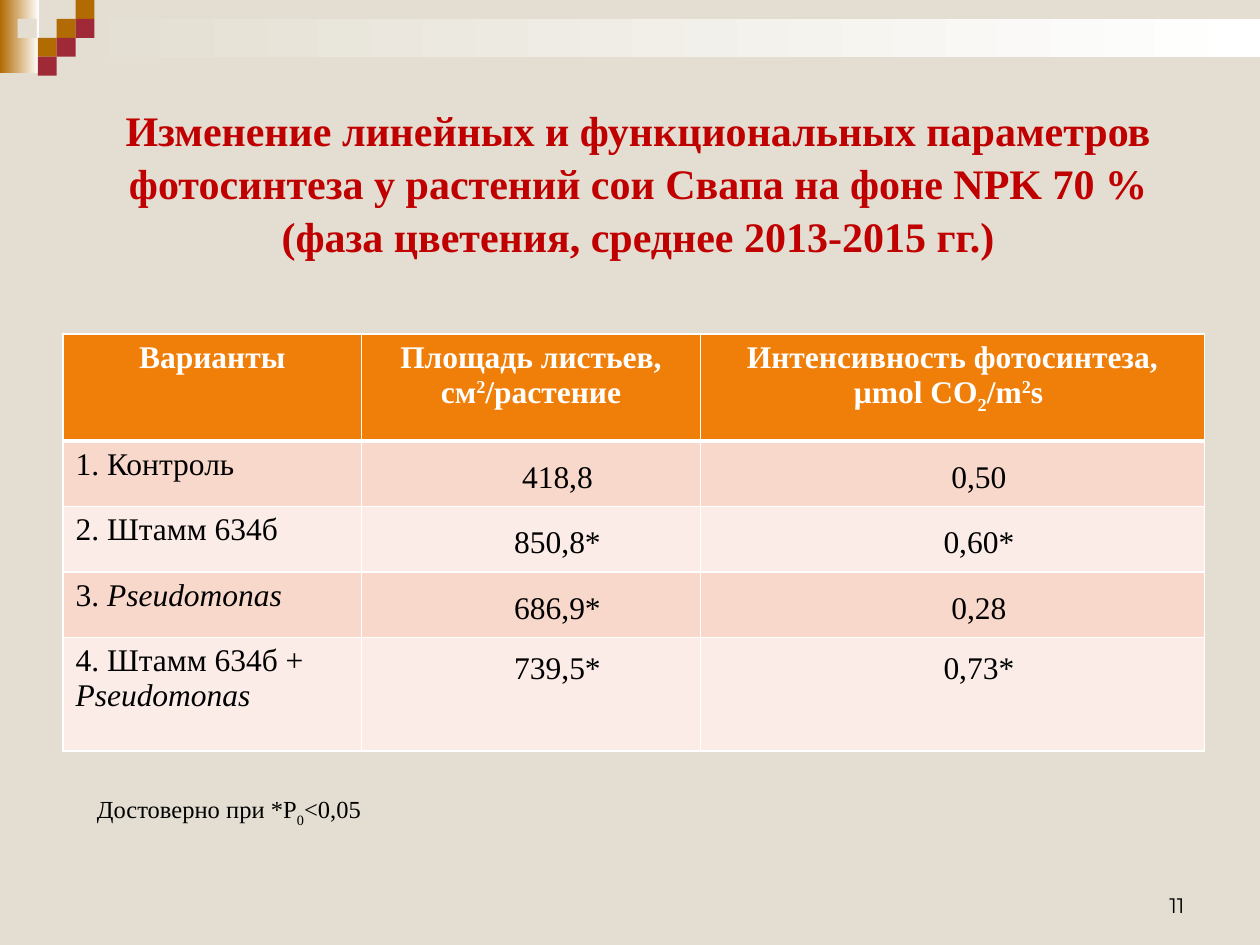
from pptx import Presentation
from pptx.dml.color import RGBColor
from pptx.enum.shapes import MSO_SHAPE
from pptx.enum.text import MSO_ANCHOR as Anchor, MSO_AUTO_SIZE as AutoSize, PP_ALIGN as Align
from pptx.oxml import parse_xml
from pptx.oxml.ns import nsdecls
from pptx.util import Inches, Pt

COLORS = {
    "background": "E3DED1", "ochre": "B26B02", "maroon": "9F2936",
    "white": "FFFFFF", "black": "000000", "title": "C00000",
    "header": "F07F09", "odd_row": "F9D8CC", "even_row": "FCECE7",
}


def rgb(name):
    return RGBColor.from_string(COLORS[name])


def write_text(paragraph, text, size=18, color="black", font="Times New Roman",
               bold=False, italic=False, baseline=0, align=Align.LEFT):
    paragraph.alignment = align
    run = paragraph.add_run()
    run.text = text
    run.font.name = font
    run.font.size = Pt(size)
    run.font.bold = bold
    run.font.italic = italic
    run.font.color.rgb = rgb(color)
    if baseline:
        run.font._element.set("baseline", str(baseline * 1000))


presentation = Presentation()
presentation.slide_width = Inches(10)
presentation.slide_height = Inches(7.5)
slide = presentation.slides.add_slide(presentation.slide_layouts[5])
slide.background.fill.solid()
slide.background.fill.fore_color.rgb = rgb("background")

decorations = [
    (0, 0, 0.31, 0.58, ("ochre", "white")),
    (0.45, 0.15, 9.55, 0.3, ("background", "white")),
]
squares = [
    (0.45, 0.15, "ochre"), (0.6, 0, "ochre"), (0.6, 0.15, "maroon"),
    (0.3, 0.3, "ochre"), (0.14, 0.15, "background"),
    (0.45, 0.3, "maroon"), (0.3, 0.45, "maroon"),
]
decorations += [(left, top, 0.15, 0.15, (color,)) for left, top, color in squares]
for left, top, width, height, colors in decorations:
    shape = slide.shapes.add_shape(MSO_SHAPE.RECTANGLE, Inches(left), Inches(top),
                                   Inches(width), Inches(height))
    shape.shadow.inherit = False
    shape.line.fill.background()
    if len(colors) == 2:
        shape.fill.gradient()
        shape.fill.gradient_angle = 0
        for stop, color in zip(shape.fill.gradient_stops, colors):
            stop.color.rgb = rgb(color)
    else:
        shape.fill.solid()
        shape.fill.fore_color.rgb = rgb(colors[0])

title = slide.shapes.title
title.left, title.top = Inches(0.51), Inches(0.76)
title.width, title.height = Inches(9.11), Inches(1.18)
title.text_frame.word_wrap = True
title.text_frame.auto_size = AutoSize.NONE
title.text_frame.vertical_anchor = Anchor.TOP
title.text_frame.paragraphs[0].line_spacing = 1.05
write_text(title.text_frame.paragraphs[0],
           "Изменение линейных и функциональных параметров фотосинтеза у растений сои "
           "Свапа на фоне NPK 70 % (фаза цветения, среднее 2013-2015 гг.)",
           size=24, color="title", bold=True, align=Align.CENTER)

superscript, subscript, italic = {"baseline": 30}, {"baseline": -25}, {"italic": True}
rows = [
    [
        [[("Варианты", {})]],
        [[("Площадь листьев, см", {}), ("2", superscript), ("/растение", {})]],
        [[("Интенсивность фотосинтеза,", {})],
         [("μmol CO", {}), ("2", subscript), ("/m", {}), ("2", superscript), ("s ", {})]],
    ],
    [[[("1. Контроль", {})]], [[("418,8", {})]], [[("0,50", {})]]],
    [[[("2. Штамм 634б", {})]], [[("850,8*", {})]], [[("0,60*", {})]]],
    [[[("3. ", {}), ("Pseudomonas", italic)]], [[("686,9*", {})]], [[("0,28", {})]]],
    [[[("4. Штамм 634б +", {})], [("Pseudomonas", italic)]],
     [[("739,5*", {})]], [[("0,73*", {})]]],
]
column_widths = [2.37, 2.69, 4]
row_heights = [0.85, 0.52, 0.52, 0.52, 0.9]
table = slide.shapes.add_table(len(rows), len(column_widths), Inches(0.5), Inches(2.65),
                               Inches(9.06), Inches(3.31)).table
for column, width in zip(table.columns, column_widths):
    column.width = Inches(width)
for row, height in zip(table.rows, row_heights):
    row.height = Inches(height)

for row_index, row in enumerate(rows):
    is_header = row_index == 0
    fill_color = "header" if is_header else ("even_row", "odd_row")[row_index % 2]
    for column_index, paragraphs in enumerate(row):
        cell = table.cell(row_index, column_index)
        is_value = not is_header and column_index > 0
        if is_value and row_index < len(rows) - 1:
            cell.vertical_anchor = Anchor.MIDDLE
            cell.margin_left = cell.margin_right = Inches(0.07)
            cell.margin_top = cell.margin_bottom = 0
        for index, runs in enumerate(paragraphs):
            frame = cell.text_frame
            paragraph = frame.add_paragraph() if index else frame.paragraphs[0]
            if is_value:
                paragraph.line_spacing = Pt(24.2)
                paragraph._p.get_or_add_pPr().set("indent", str(Inches(0.42)))
            for text, style in runs:
                write_text(paragraph, text, bold=is_header,
                           color="white" if is_header else "black",
                           align=Align.CENTER if is_header or is_value else Align.LEFT,
                           **style)
        properties = cell._tc.get_or_add_tcPr()
        for side in ("lnL", "lnR", "lnT", "lnB"):
            thick = (row_index, side) in ((0, "lnB"), (1, "lnT"))
            properties.append(parse_xml(
                f'<a:{side} {nsdecls("a")} w="{Pt(3 if thick else 1)}"><a:solidFill>'
                f'<a:srgbClr val="{COLORS["white"]}"/></a:solidFill></a:{side}>'))
        cell.fill.solid()
        cell.fill.fore_color.rgb = rgb(fill_color)

footnote = slide.shapes.add_textbox(Inches(0.67), Inches(6.27), Inches(2.62), Inches(0.34))
footnote.text_frame.word_wrap = True
footnote.text_frame.vertical_anchor = Anchor.MIDDLE
for text, baseline in (("Достоверно при *Р", 0), ("0", -30), ("<0,05", 0)):
    write_text(footnote.text_frame.paragraphs[0], text, size=14, baseline=baseline)

page_number = slide.shapes.add_textbox(Inches(7.17), Inches(6.83), Inches(2.33), Inches(0.5))
page_number.text_frame.word_wrap = True
page_number.text_frame.vertical_anchor = Anchor.BOTTOM
write_text(page_number.text_frame.paragraphs[0], "11", size=12, font="Montserrat",
           align=Align.RIGHT)

presentation.save("out.pptx")
